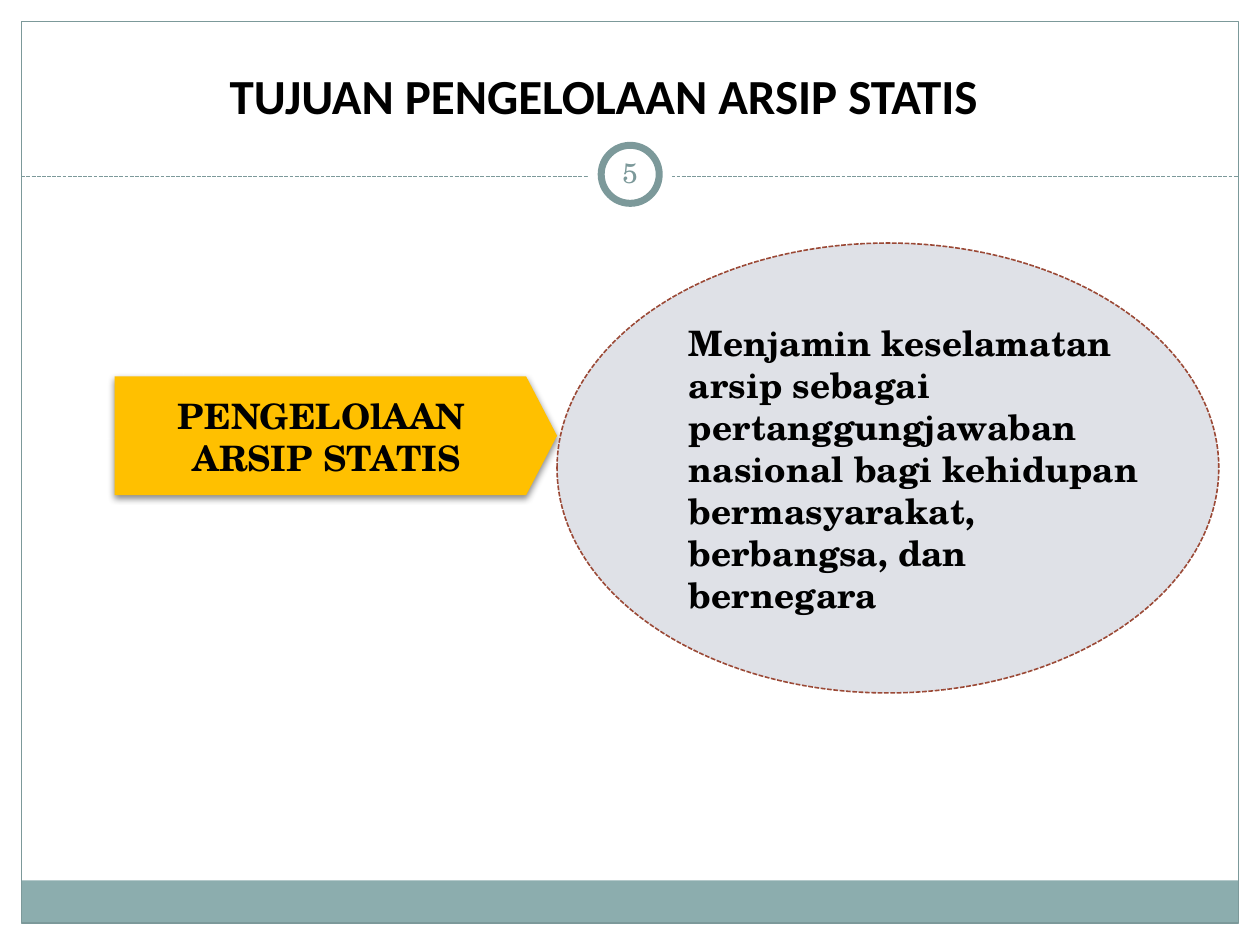
from lxml import etree
from pptx import Presentation
from pptx.dml.color import RGBColor
from pptx.enum.dml import MSO_LINE
from pptx.enum.shapes import MSO_CONNECTOR, MSO_SHAPE
from pptx.enum.text import MSO_ANCHOR, MSO_AUTO_SIZE, PP_ALIGN
from pptx.oxml.ns import qn
from pptx.util import Cm, Pt

RECT, OVAL, PENTAGON = MSO_SHAPE.RECTANGLE, MSO_SHAPE.OVAL, MSO_SHAPE.PENTAGON
STRAIGHT, DASH = MSO_CONNECTOR.STRAIGHT, MSO_LINE.SQUARE_DOT
LEFT, CENTER = PP_ALIGN.LEFT, PP_ALIGN.CENTER
TOP, MIDDLE = MSO_ANCHOR.TOP, MSO_ANCHOR.MIDDLE
NO_FIT = MSO_AUTO_SIZE.NONE
SERIF, SANS = "TeX Gyre Schola", "Calibri"
TEAL = "7C999A"
rgb = RGBColor.from_string

prs = Presentation()
prs.slide_width, prs.slide_height = Cm(25.4), Cm(19.05)
s = prs.slides.add_slide(prs.slide_layouts[5])


def add_shape(kind, x, y, w, h, fill=None, line=None, width=0.75, dash=None):
    sp = s.shapes.add_shape(kind, Cm(x), Cm(y), Cm(w), Cm(h))
    sp.shadow.inherit = False
    if fill:
        sp.fill.solid()
        sp.fill.fore_color.rgb = rgb(fill)
    else:
        sp.fill.background()
    if line:
        sp.line.color.rgb = rgb(line)
        sp.line.width = Pt(width)
        sp.line.dash_style = dash
    else:
        sp.line.fill.background()
    return sp


def write(text, x, y, w, h, sp=None, size=20, font=SERIF, color="000000", bold=True,
          align=CENTER, anchor=TOP, spacing=1.0, indent=0, inset=0.25):
    sp = sp or s.shapes.add_textbox(0, 0, 0, 0)
    sp.left, sp.top, sp.width, sp.height = Cm(x), Cm(y), Cm(w), Cm(h)
    tf = sp.text_frame
    tf.word_wrap, tf.auto_size, tf.vertical_anchor = True, NO_FIT, anchor
    tf.margin_left = tf.margin_right = Cm(inset)
    tf.margin_top = tf.margin_bottom = Cm(0.13)
    tf.text = text
    for p in tf.paragraphs:
        p.alignment, p.line_spacing = align, spacing
        if indent:
            pPr = p._p.get_or_add_pPr()
            pPr.set("marL", str(Cm(indent)))
            pPr.set("indent", "0")
        for r in p.runs:
            r.font.name, r.font.size, r.font.bold = font, Pt(size), bold
            r.font.color.rgb = rgb(color)


# Frame and bottom band
add_shape(RECT, 0.43, 17.75, 24.54, 0.86, fill="8CADAE")
add_shape(RECT, 0.43, 0.43, 24.54, 18.18, line=TEAL)

# Dashed rule under the title
rule = s.shapes.add_connector(STRAIGHT, Cm(0.43), Cm(3.56), Cm(24.97), Cm(3.56))
rule.line.color.rgb = rgb(TEAL)
rule.line.width = Pt(0.75)
rule.line.dash_style = DASH
etree.SubElement(rule._element.spPr, qn("a:effectLst"))

# Slide number badge
add_shape(OVAL, 11.85, 2.67, 1.7, 1.7, fill="FFFFFF")
add_shape(OVAL, 12.12, 2.93, 1.17, 1.17, fill="FFFFFF", line=TEAL, width=4)
write("5", 12.07, 2.87, 1.27, 1.22, size=16, color=TEAL, bold=False,
      anchor=MIDDLE, inset=0.13)

# Title
write("TUJUAN PENGELOLAAN ARSIP STATIS ", 1.7, 1.27, 21.16, 1.9, sp=s.shapes.title,
      size=28, font=SANS, spacing=0.95, inset=0)

# Arrow with soft shadow
arrow = add_shape(PENTAGON, 2.31, 7.59, 8.92, 2.39, fill="FFC000")
arrow.adjustments[0] = 0.26
effects = arrow._element.spPr.find(qn("a:effectLst"))
shadow = etree.SubElement(effects, qn("a:outerShdw"), blurRad=str(Pt(4)),
                          dist=str(Pt(2)), dir="5400000", rotWithShape="0")
black = etree.SubElement(shadow, qn("a:srgbClr"), val="000000")
etree.SubElement(black, qn("a:alpha"), val="45000")
write("PENGELOlAAN \nARSIP STATIS", 2.29, 7.82, 8.59, 1.96)

# Goal
add_shape(OVAL, 11.23, 4.9, 13.34, 9.07, fill="DFE1E7", line="9B4936", width=0.9, dash=DASH)
write("Menjamin keselamatan arsip sebagai pertanggungjawaban nasional bagi kehidupan "
      "bermasyarakat, berbangsa, dan bernegara",
      13.49, 6.35, 10.16, 6.25, align=LEFT, indent=0.15)

prs.save("out.pptx")
